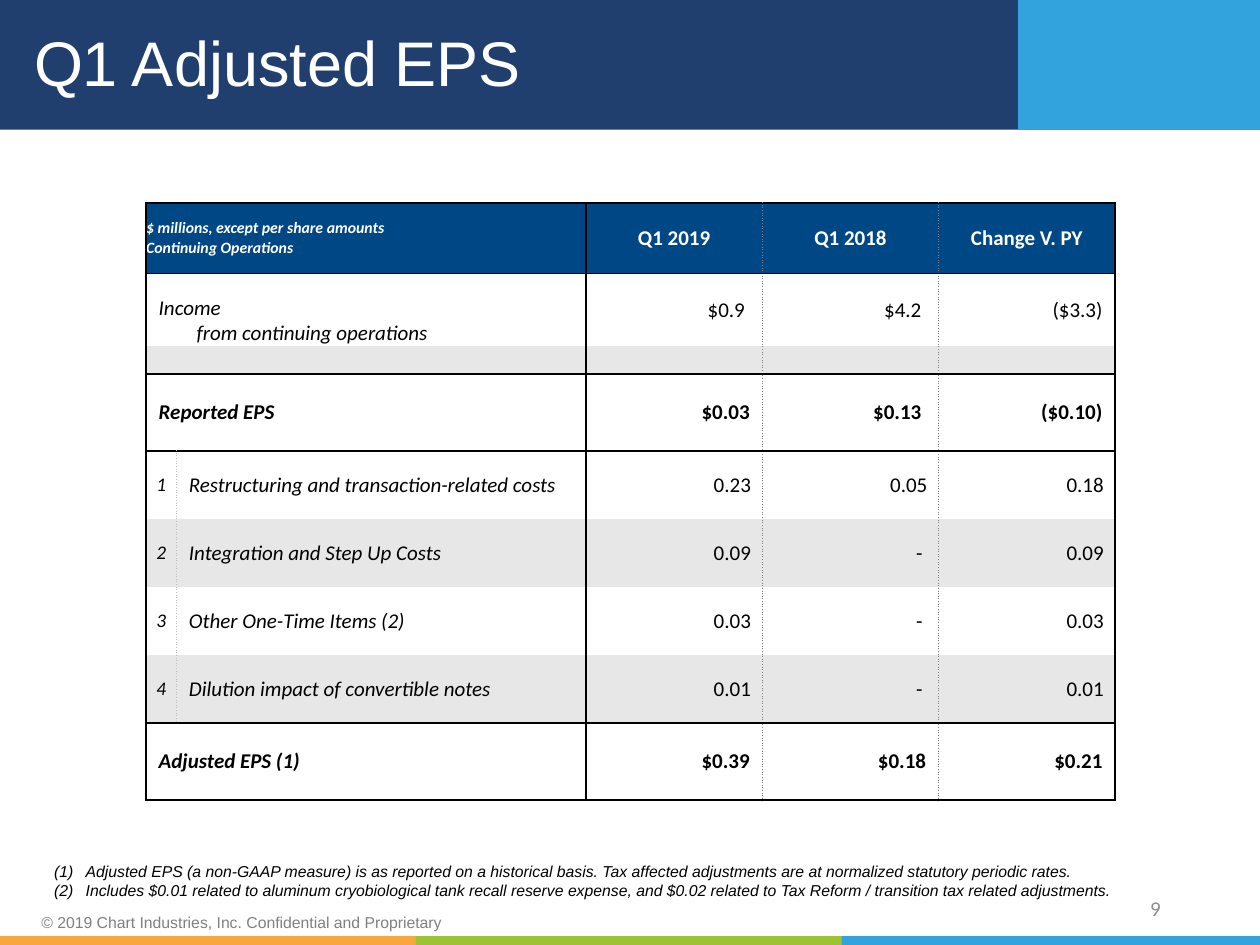
from dataclasses import dataclass
from typing import Any

from lxml import etree
from pptx import Presentation
from pptx import util as u
from pptx.dml.color import RGBColor
from pptx.enum import shapes, text
from pptx.oxml import ns

COLORS = {
    "navy": "203F6E", "sky": "33A3DD", "orange": "F9A63F", "green": "9DC335",
    "header": "004785", "band": "E7E7E7", "white": "FFFFFF", "black": "000000",
    "dots": "808080", "pale dots": "BFBFBF", "number": "8C8C8C",
}
COLUMNS, ROWS = 100, 75
LEFT, CENTER, RIGHT = text.PP_ALIGN.LEFT, text.PP_ALIGN.CENTER, text.PP_ALIGN.RIGHT
MIDDLE, BOTTOM = text.MSO_ANCHOR.MIDDLE, text.MSO_ANCHOR.BOTTOM

HEADINGS = ["Q1 2019", "Q1 2018", "Change V. PY"]
ITEMS = [
    ("Restructuring and transaction-related costs", ["0.23", "0.05", "0.18"]),
    ("Integration and Step Up Costs", ["0.09", "- ", "0.09"]),
    ("Other One-Time Items (2)", ["0.03", "- ", "0.03"]),
    ("Dilution impact of convertible notes", ["0.01", "- ", "0.01"]),
]
NOTES = [
    "Adjusted EPS (a non-GAAP measure) is as reported on a historical basis. "
    "Tax affected adjustments are at normalized statutory periodic rates.",
    "Includes $0.01 related to aluminum cryobiological tank recall reserve expense, "
    "and $0.02 related to Tax Reform / transition tax related adjustments.",
]


@dataclass
class SlideBuilder:
    deck: Any
    page: Any

    def place(self, left, top, width, height):
        across, down = self.deck.slide_width / COLUMNS, self.deck.slide_height / ROWS
        return [round(v) for v in (left * across, top * down, width * across, height * down)]

    def bar(self, area, color):
        bar = self.page.shapes.add_shape(shapes.MSO_SHAPE.RECTANGLE, *self.place(*area))
        bar.shadow.inherit = False
        bar.fill.solid()
        bar.fill.fore_color.rgb = RGBColor.from_string(COLORS[color])
        bar.line.fill.background()

    def set_lines(self, frame, lines, size, color, font="Arial", align=LEFT,
                  bold=False, italic=False, numbered=False):
        for index, line in enumerate(lines):
            para = frame.add_paragraph() if index else frame.paragraphs[0]
            if numbered:
                props = para._p.get_or_add_pPr()
                props.set("marL", str(u.Inches(0.25)))
                props.set("indent", str(-u.Inches(0.25)))
                etree.SubElement(props, ns.qn("a:buFont"), typeface="+mj-lt")
                etree.SubElement(props, ns.qn("a:buAutoNum"), type="arabicParenBoth")
            para.text = line
            para.alignment = align
            para.space_before = u.Pt(0)
            para.font.name, para.font.size = font, u.Pt(size)
            para.font.bold, para.font.italic = bold, italic
            para.font.color.rgb = RGBColor.from_string(COLORS[color])

    def label(self, area, line, size, color, **style):
        box = self.page.shapes.add_textbox(*self.place(*area))
        frame = box.text_frame
        frame.word_wrap = True
        frame.vertical_anchor = MIDDLE
        frame.margin_top = frame.margin_bottom = u.Inches(0.02)
        self.set_lines(frame, [line], size, color, **style)

    def placeholder(self, index, area):
        holder = self.page.placeholders[index]
        holder.left, holder.top, holder.width, holder.height = self.place(*area)
        self.page.shapes._spTree.append(holder._element)
        holder.text_frame.auto_size = text.MSO_AUTO_SIZE.NONE
        return holder.text_frame

    def title(self, area, line):
        frame = self.placeholder(0, area)
        frame.vertical_anchor = MIDDLE
        self.set_lines(frame, [line], 36, "white")
        frame.paragraphs[0].line_spacing = 0.9

    def footnotes(self, area, lines):
        # placeholder
        frame = self.placeholder(1, area)
        frame.margin_left = frame.margin_right = u.Inches(0.05)
        self.set_lines(frame, lines, 9, "black", italic=True, numbered=True)

    def table(self, area, widths, heights):
        frame = self.page.shapes.add_table(len(heights), len(widths), *self.place(*area))
        table = frame.table
        table.first_row = table.horz_banding = False
        for column, width in zip(table.columns, widths):
            column.width = u.Inches(width)
        for row, height in zip(table.rows, heights):
            row.height = u.Inches(height)
        return table

    def cell(self, cell, lines, fill, edges, size=12, color="black", inset=(0, 0),
             anchor=MIDDLE, **style):
        cell.margin_left, cell.margin_right = (u.Inches(v) for v in inset)
        cell.margin_top = cell.margin_bottom = 0
        cell.vertical_anchor = anchor
        cell.fill.solid()
        cell.fill.fore_color.rgb = RGBColor.from_string(COLORS[fill])
        if lines:
            self.set_lines(cell.text_frame, lines, size, color, "Calibri", **style)
        else:
            end = cell.text_frame.paragraphs[0]._p.get_or_add_endParaRPr()
            end.set("sz", str(size * 100))
        props = cell._tc.get_or_add_tcPr()
        for index, (side, edge) in enumerate(zip("LRTB", edges)):
            line = etree.Element(ns.qn(f"a:ln{side}"))
            props.insert(index, line)
            if edge is None:
                etree.SubElement(line, ns.qn("a:noFill"))
                continue
            line.set("w", str(u.Pt(1 if edge == "black" else 0.5)))
            paint = etree.SubElement(line, ns.qn("a:solidFill"))
            etree.SubElement(paint, ns.qn("a:srgbClr"), val=COLORS[edge])
            etree.SubElement(line, ns.qn("a:prstDash"),
                             val="solid" if edge == "black" else "sysDot")


def eps_table(slide):
    heights = [0.56, 0.58, 0.22, 0.61, *[0.54] * len(ITEMS), 0.61]
    table = slide.table((11.6, 16.1, 76.8, 47.4), [0.24, 3.25, 1.4, 1.4, 1.4], heights)
    uprights = ["black", "pale dots", "black", "dots", "dots", "black"]
    ruled = {0, 1, 3, 4, 8, 9}

    def edges(row, first, last):
        levels = ["black" if level in ruled else None for level in (row, row + 1)]
        return [uprights[first], uprights[last + 1], *levels]

    def values(row, entries, fill="white", **style):
        for column, entry in enumerate(entries, 2):
            slide.cell(table.cell(row, column), [entry] if entry else [], fill,
                       edges(row, column, column), **style)

    def wide(row, lines, fill="white", **style):
        head = table.cell(row, 0)
        head.merge(table.cell(row, 1))
        slide.cell(head, lines, fill, edges(row, 0, 1), **style)

    wide(0, ["$ millions, except per share amounts", "Continuing Operations"], "header",
         size=9, color="white", bold=True, italic=True)
    values(0, HEADINGS, "header", color="white", bold=True, align=CENTER)

    wide(2, [], "band", size=9)
    values(2, [""] * 3, "band", size=9)

    totals = [
        (1, ["Income", "from continuing operations"], ["$0.9 ", "$4.2 ", "($3.3)"], False, BOTTOM),
        (3, ["Reported EPS"], ["$0.03", "$0.13 ", "($0.10)"], True, MIDDLE),
        (8, ["Adjusted EPS (1)"], ["$0.39", "$0.18", "$0.21"], True, MIDDLE),
    ]
    for row, lines, entries, bold, anchor in totals:
        wide(row, lines, inset=(0.1, 0), anchor=anchor, bold=bold, italic=True)
        values(row, entries, inset=(0, 0.1), align=RIGHT, bold=bold)
    income = table.cell(1, 0).text_frame.paragraphs[1]
    income._p.get_or_add_pPr().set("marL", str(u.Inches(0.3)))

    for number, (name, entries) in enumerate(ITEMS, 1):
        row = number + 3
        fill = "white" if number % 2 else "band"
        slide.cell(table.cell(row, 0), [str(number)], fill, edges(row, 0, 0),
                   size=11, align=CENTER, italic=True)
        slide.cell(table.cell(row, 1), [name], fill, edges(row, 1, 1),
                   inset=(0.1, 0), italic=True)
        values(row, entries, fill, inset=(0, 0.09), align=RIGHT)


def main():
    deck = Presentation()
    deck.slide_width, deck.slide_height = u.Inches(10), u.Inches(7.5)
    slide = SlideBuilder(deck, deck.slides.add_slide(deck.slide_layouts[1]))
    slide.bar((-0.1, 0, 100.2, 10.3), "navy")
    slide.bar((80.8, -0.1, 19.3, 10.4), "sky")
    slide.label((2.3, 72.3, 40, 1.8),
                "© 2019 Chart Industries, Inc. Confidential and Proprietary", 9, "dots")
    for left, color in [(66.7, "sky"), (-0.4, "orange"), (33, "green")]:
        slide.bar((left, 74.3, 33.8, 0.8), color)
    slide.title((1.7, 0.9, 78.3, 8.7), "Q1 Adjusted EPS")
    slide.footnotes((3.8, 67.9, 96.2, 7.1), NOTES)
    slide.label((70.6, 70.1, 22.5, 4), "9", 12, "number", font="Calibri", align=RIGHT)
    eps_table(slide)
    deck.save("out.pptx")


if __name__ == "__main__":
    main()
